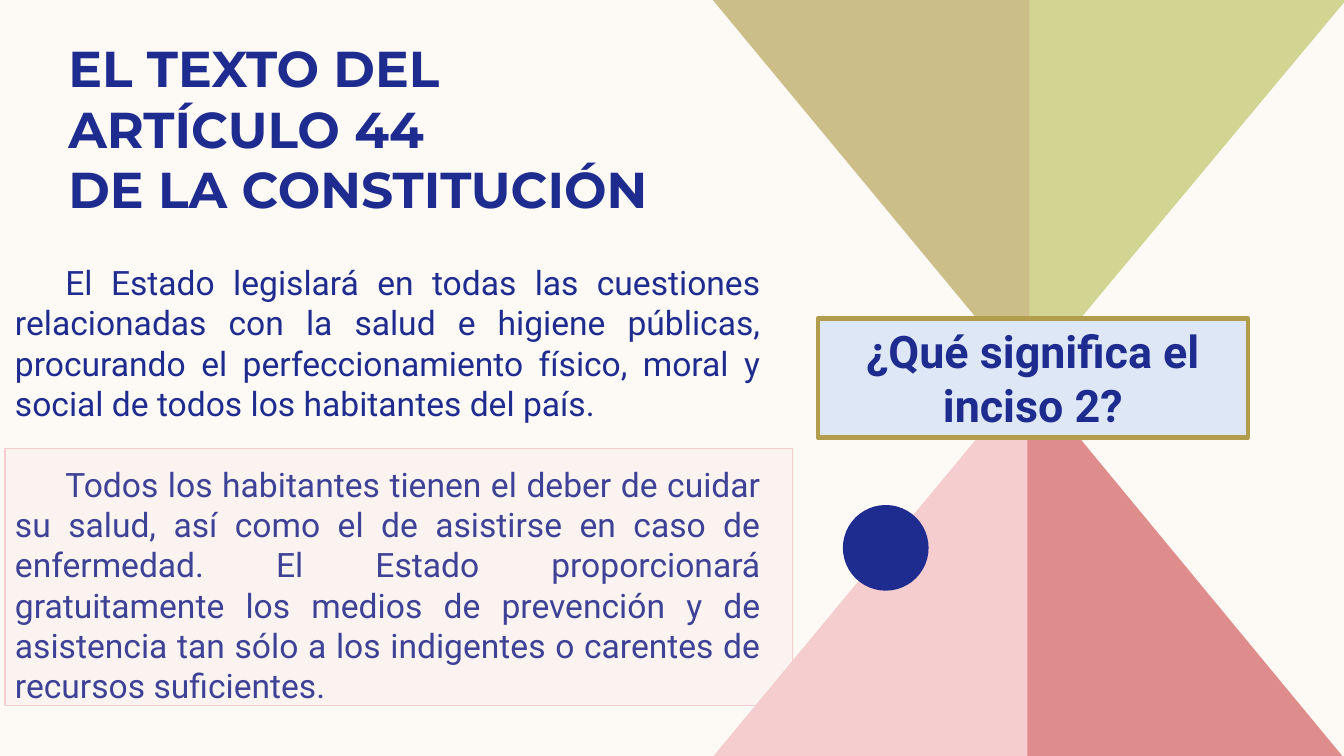
import pptx
import pptx.util
import pptx.dml.color
import pptx.enum.shapes
import pptx.enum.text
import pptx.oxml.ns
import lxml.etree

Inches = pptx.util.Inches
Pt = pptx.util.Pt
ALIGN = pptx.enum.text.PP_ALIGN
ANCHOR = pptx.enum.text.MSO_ANCHOR
SHAPE = pptx.enum.shapes.MSO_SHAPE

THEME = {
    "paper": "FDFAF6", "navy": "1F2C8F", "pink": "F5CDCE", "rose": "DE8C8C",
    "lime": "D2D592", "sand": "CCBE89", "sky": "DDE7F6", "gold": "B29D4D",
    "heading_font": "Montserrat", "body_font": "Roboto",
    "title_pt": 36, "body_pt": 24, "question_pt": 32, "body_line_pt": 28.8,
}

TITLE = ["EL TEXTO DEL ARTÍCULO 44\vDE LA CONSTITUCIÓN"]
ARTICLE = [
    "El Estado legislará en todas las cuestiones relacionadas con la salud e higiene "
    "públicas, procurando el perfeccionamiento físico, moral y social de todos los "
    "habitantes del país.",
    "Todos los habitantes tienen el deber de cuidar su salud, así como el de asistirse "
    "en caso de enfermedad. El Estado proporcionará gratuitamente los medios de "
    "prevención y de asistencia tan sólo a los indigentes o carentes de recursos "
    "suficientes.",
]
QUESTION = ["¿Qué significa el inciso 2?"]

# (apex x, apex y, outer x, base y, colour)
TRIANGLES = [
    (10.21, 3.72, 7.06, 7.52, "pink"),
    (10.19, 3.72, 13.33, 7.52, "rose"),
    (10.19, 3.79, 13.35, 0, "lime"),
    (10.21, 3.79, 7.07, 0, "sand"),
]
DOT = (8.36, 5.01, 0.85, 0.85)
TITLE_BOX = (0.58, 0.5, 6.53, 1.67)
ARTICLE_BOX = (0.05, 2.55, 7.59, 4.14)
QUESTION_BOX = (8.11, 3.16, 4.27, 1.18)
HIGHLIGHT_BOX = (0.05, 4.45, 7.81, 2.55)


def rgb(name):
    return pptx.dml.color.RGBColor.from_string(THEME[name])


def paint(sp, fill, line=None, width=1):
    sp.shadow.inherit = False
    sp.fill.solid()
    sp.fill.fore_color.rgb = rgb(fill)
    if line:
        sp.line.color.rgb = rgb(line)
        sp.line.width = Pt(width)
    else:
        sp.line.fill.background()
    return sp


def add_shape(slide, kind, box, *style):
    return paint(slide.shapes.add_shape(kind, *map(Inches, box)), *style)


def add_triangle(slide, apex_x, apex_y, outer_x, base_y, fill):
    builder = slide.shapes.build_freeform(Inches(apex_x), Inches(apex_y))
    corners = [(outer_x, base_y), (apex_x, base_y)]
    builder.add_line_segments([(Inches(x), Inches(y)) for x, y in corners], close=True)
    paint(builder.convert_to_shape(), fill)


def write(sp, paragraphs, font, size, align, anchor=ANCHOR.TOP, bold=False):
    tf = sp.text_frame
    tf.word_wrap = True
    tf.vertical_anchor = anchor
    for i, text in enumerate(paragraphs):
        p = tf.paragraphs[0] if i == 0 else tf.add_paragraph()
        p.alignment = align
        for j, part in enumerate(text.split("\v")):
            if j:
                p.add_line_break()
            r = p.add_run()
            r.text = part
            r.font.name = THEME[font]
            r.font.size = Pt(THEME[size])
            r.font.bold = bold
            r.font.color.rgb = rgb("navy")
    return tf


prs = pptx.Presentation()
prs.slide_width, prs.slide_height = Inches(13.33), Inches(7.5)
slide = prs.slides.add_slide(prs.slide_layouts[6])
slide.background.fill.solid()
slide.background.fill.fore_color.rgb = rgb("paper")

for triangle in TRIANGLES:
    add_triangle(slide, *triangle)
add_shape(slide, SHAPE.OVAL, DOT, "navy")

title = add_shape(slide, SHAPE.RECTANGLE, TITLE_BOX, "paper")
tf = write(title, TITLE, "heading_font", "title_pt", ALIGN.LEFT, ANCHOR.BOTTOM, True)
tf.margin_top = tf.margin_bottom = 0

article = add_shape(slide, SHAPE.RECTANGLE, ARTICLE_BOX, "paper")
tf = write(article, ARTICLE, "body_font", "body_pt", ALIGN.JUSTIFY)
tf.auto_size = pptx.enum.text.MSO_AUTO_SIZE.SHAPE_TO_FIT_TEXT
for p in tf.paragraphs:
    p._p.get_or_add_pPr().set("indent", str(Inches(0.5)))
tf.paragraphs[0].space_after = Pt(THEME["body_line_pt"])

question = add_shape(slide, SHAPE.RECTANGLE, QUESTION_BOX, "sky", "gold", 3)
write(question, QUESTION, "body_font", "question_pt", ALIGN.CENTER, bold=True)

highlight = add_shape(slide, SHAPE.RECTANGLE, HIGHLIGHT_BOX, "pink", "pink")
qn = pptx.oxml.ns.qn
color = highlight._element.spPr.find(qn("a:solidFill")).find(qn("a:srgbClr"))
lxml.etree.SubElement(color, qn("a:alpha")).set("val", "14000")

prs.save("out.pptx")
